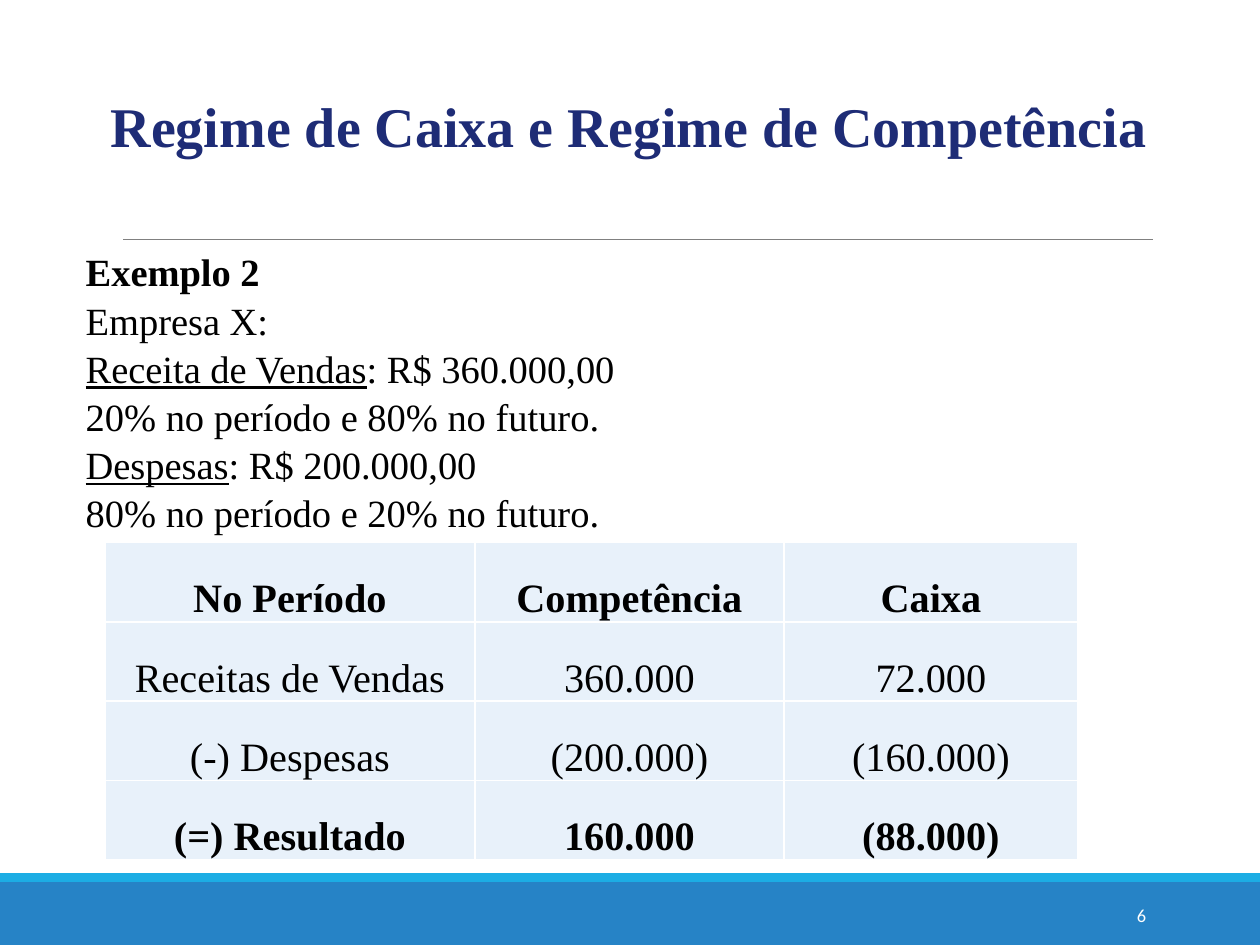
"""Build the slide on cash and accrual accounting, example 2."""
from lxml import etree
from pptx import Presentation
from pptx.dml.color import RGBColor
from pptx.enum.shapes import MSO_CONNECTOR, MSO_SHAPE
from pptx.enum.text import MSO_ANCHOR, MSO_AUTO_SIZE, PP_ALIGN
from pptx.oxml.ns import qn
from pptx.util import Pt

LEFT, CENTER, RIGHT = PP_ALIGN.LEFT, PP_ALIGN.CENTER, PP_ALIGN.RIGHT
TOP, MIDDLE, BOTTOM = MSO_ANCHOR.TOP, MSO_ANCHOR.MIDDLE, MSO_ANCHOR.BOTTOM
NO_FIT = MSO_AUTO_SIZE.NONE
RECTANGLE = MSO_SHAPE.RECTANGLE
STRAIGHT = MSO_CONNECTOR.STRAIGHT
TITLE_ONLY = 5
SERIF, SANS = "Times New Roman", "Calibri"
COLORS = {
    "title": "1E2C76", "text": "000000", "white": "FFFFFF", "rule": "808080",
    "band": "2683C6", "stripe": "1CADE4", "cell": "E8F1FA",
}
EXAMPLE = [
    [("Exemplo 2", "b")],
    [("Empresa X:", "")],
    [("Receita de Vendas", "u"), (": R$ 360.000,00", "")],
    [("20% no período e 80% no futuro.", "")],
    [("Despesas", "u"), (": R$ 200.000,00", "")],
    [("80% no período e 20% no futuro.", "")],
]
RESULTS = [
    ["No Período", "Competência", "Caixa"],
    ["Receitas de Vendas", "360.000", "72.000"],
    ["(-) Despesas", "(200.000)", "(160.000)"],
    ["(=) Resultado", "160.000", "(88.000)"],
]
COLUMN_WIDTHS = [211.5, 176.5, 168]
ROW_HEIGHT = 45.35


def color(name):
    return RGBColor.from_string(COLORS[name])


def add_run(p, text, size, font=SERIF, fill="text", style=""):
    r = p.add_run()
    r.text = text
    r.font.name, r.font.size = font, Pt(size)
    r.font.color.rgb = color(fill)
    r.font.bold = "b" in style
    r.font.underline = "u" in style


def place(sp, left, top, width, height):
    sp.left, sp.top, sp.width, sp.height = map(Pt, (left, top, width, height))


def setup_frame(tf, anchor):
    tf.word_wrap = True
    tf.auto_size = NO_FIT
    tf.vertical_anchor = anchor
    tf.margin_left = tf.margin_right = tf.margin_top = tf.margin_bottom = 0


def add_bar(s, top, height, fill):
    sp = s.shapes.add_shape(RECTANGLE, 0, Pt(top), Pt(720), Pt(height))
    sp.shadow.inherit = False
    sp.fill.solid()
    sp.fill.fore_color.rgb = color(fill)
    sp.line.fill.background()


def add_rule(s, left, right, y):
    line = s.shapes.add_connector(STRAIGHT, Pt(left), Pt(y), Pt(right), Pt(y))
    line.line.color.rgb = color("rule")
    line.line.width = Pt(0.5)
    etree.SubElement(line._element.spPr, qn("a:effectLst"))


def set_title(s, text):
    title = s.shapes.title
    place(title, 42, 52.5, 635, 60)
    setup_frame(title.text_frame, TOP)
    p = title.text_frame.paragraphs[0]
    p.alignment = CENTER
    add_run(p, text, 32, fill="title", style="b")


def add_text(s, box, paragraphs, size, font, fill, align, anchor):
    sp = s.shapes.add_textbox(*map(Pt, box))
    tf = sp.text_frame
    setup_frame(tf, anchor)
    for i, runs in enumerate(paragraphs):
        p = tf.add_paragraph() if i else tf.paragraphs[0]
        p.alignment = align
        p.space_before = Pt(1.1 if i else 0)
        for text, style in runs:
            add_run(p, text, size, font, fill, style)


def set_borders(cell):
    tc_pr = cell._tc.get_or_add_tcPr()
    for i, side in enumerate(("lnL", "lnR", "lnT", "lnB")):
        ln = etree.Element(qn(f"a:{side}"), w=str(Pt(1)))
        solid = etree.SubElement(ln, qn("a:solidFill"))
        etree.SubElement(solid, qn("a:srgbClr"), val=COLORS["white"])
        tc_pr.insert(i, ln)


def fill_cell(cell, text, style):
    cell.fill.solid()
    cell.fill.fore_color.rgb = color("cell")
    cell.vertical_anchor = BOTTOM
    cell.margin_left = cell.margin_right = cell.margin_top = Pt(0.75)
    cell.margin_bottom = 0
    p = cell.text_frame.paragraphs[0]
    p.alignment = CENTER
    add_run(p, text, 23, style=style)
    set_borders(cell)


def add_results(s, left, top):
    n_rows, n_cols = len(RESULTS), len(COLUMN_WIDTHS)
    frame = s.shapes.add_table(n_rows, n_cols, Pt(left), Pt(top),
                               Pt(sum(COLUMN_WIDTHS)), Pt(ROW_HEIGHT * n_rows))
    table = frame.table
    table.first_row = table.horz_banding = False
    for column, width in zip(table.columns, COLUMN_WIDTHS):
        column.width = Pt(width)
    for i, values in enumerate(RESULTS):
        table.rows[i].height = Pt(ROW_HEIGHT)
        style = "b" if i in (0, n_rows - 1) else ""
        for j, text in enumerate(values):
            fill_cell(table.cell(i, j), text, style)


def main():
    prs = Presentation()
    prs.slide_width, prs.slide_height = Pt(720), Pt(540)
    s = prs.slides.add_slide(prs.slide_layouts[TITLE_ONLY])
    add_bar(s, 504, 36, "band")
    add_bar(s, 499, 5, "stripe")
    add_rule(s, 70.5, 659, 136.8)
    set_title(s, "Regime de Caixa e Regime de Competência")
    add_text(s, (49, 142, 620, 160), EXAMPLE, 22, SERIF, "text", LEFT, TOP)
    add_results(s, 60, 310)
    add_text(s, (585, 508.5, 70, 29), [[("6", "")]], 10.5, SANS, "white",
             RIGHT, MIDDLE)
    prs.save("out.pptx")


if __name__ == "__main__":
    main()
